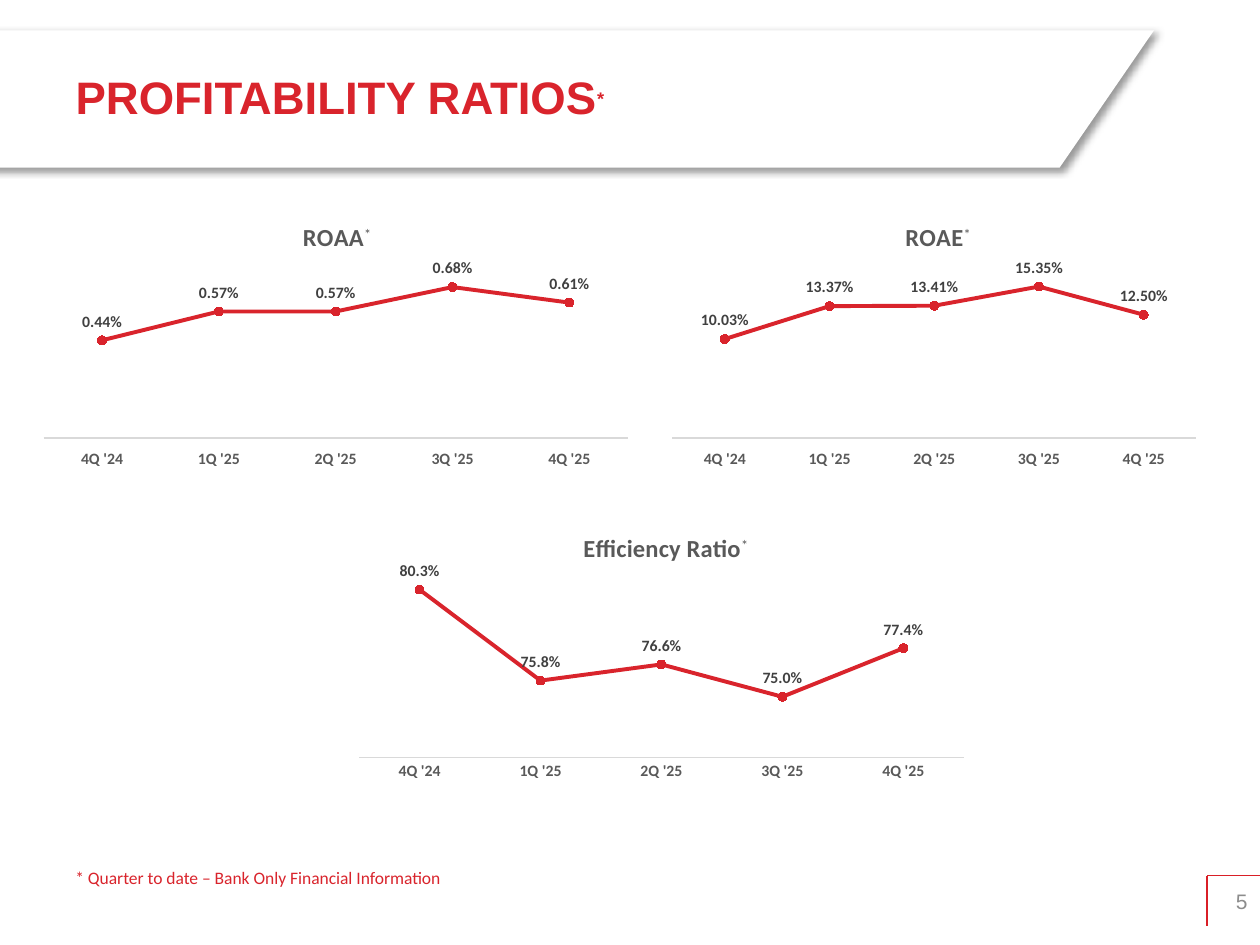
from lxml import etree
from pptx import Presentation
from pptx.chart.data import CategoryChartData
from pptx.dml.color import RGBColor
from pptx.enum.chart import (XL_CHART_TYPE, XL_LABEL_POSITION, XL_MARKER_STYLE,
                             XL_TICK_LABEL_POSITION, XL_TICK_MARK)
from pptx.enum.shapes import MSO_CONNECTOR
from pptx.enum.text import MSO_ANCHOR, MSO_AUTO_SIZE, PP_ALIGN
from pptx.oxml import parse_xml
from pptx.oxml.ns import nsdecls, qn
from pptx.util import Inches, Pt

RED = "D9242C"
GRAY = "595959"
QUARTERS = ["4Q '24", "1Q '25", "2Q '25", "3Q '25", "4Q '25"]
LABEL_FORMAT = {"size": Pt(9), "bold": True, "name": "Calibri"}
CHARTS = [
    {"box": (0.25, 1.59, 4.83, 2.17), "title": "ROAA", "title_left": 0.44,
     "values": [0.0044, 0.0057, 0.0057, 0.0068, 0.0061], "format": "0.00%",
     "scale": (0, 0.008), "plot": (0.02, 0.22, 0.96, 0.65), "marker": RED, "low": True},
    {"box": (5.25, 1.59, 4.33, 2.17), "title": "ROAE", "title_left": 0.44,
     "values": [0.1003, 0.1337, 0.1341, 0.1535, 0.125], "format": "0.00%",
     "scale": (0, 0.18), "plot": (0.02, 0.22, 0.96, 0.65), "marker": "FF0000", "low": True},
    {"box": (2.75, 4.06, 5, 2.17), "title": "Efficiency Ratio", "title_left": 0.37,
     "values": [0.803, 0.758, 0.766, 0.75, 0.774], "format": "0.0%",
     "scale": (0.72, 0.82), "plot": (0.02, 0.16, 0.96, 0.74), "marker": RED, "low": False},
]


def rgb(value):
    """Turn a hex string into a colour."""
    return RGBColor.from_string(value)


def style(font, color, **formats):
    """Set a font's colour and its other format values."""
    font.color.rgb = rgb(color)
    for name, value in formats.items():
        setattr(font, name, value)


def add_span(para, text, color, raised=False, **formats):
    """Add a formatted run, raised as a superscript if asked."""
    span = para.add_run()
    span.text = text
    style(span.font, color, **formats)
    if raised:
        span._r.get_or_add_rPr().set("baseline", "30000")


def add_banner(page, box):
    """Draw the white slanted banner with its soft shadow."""
    left, top, width, height = box
    right, bottom = left + width, top + height
    points = [(left, top), (right, top), (right - 0.75, bottom), (left, bottom)]
    corners = [(Inches(x), Inches(y)) for x, y in points]
    builder = page.shapes.build_freeform(*corners[0])
    builder.add_line_segments(corners[1:], close=True)
    banner = builder.convert_to_shape()
    banner.shadow.inherit = False
    banner.fill.solid()
    banner.fill.fore_color.rgb = rgb("FFFFFF")
    banner.line.fill.background()
    effects = banner._element.spPr.find(qn("a:effectLst"))
    effects.append(parse_xml(
        f'<a:outerShdw {nsdecls("a")} blurRad="{Pt(4)}" dist="{Pt(3)}" dir="2700000" '
        'algn="tl" rotWithShape="0"><a:srgbClr val="000000"><a:alpha val="40000"/>'
        '</a:srgbClr></a:outerShdw>'))


def add_title(page, box):
    """Place the slide title in front of the banner."""
    title = page.shapes.title
    page.shapes._spTree.append(title._element)
    title.left, title.top, title.width, title.height = map(Inches, box)
    frame = title.text_frame
    frame.auto_size = MSO_AUTO_SIZE.NONE
    frame.vertical_anchor = MSO_ANCHOR.MIDDLE
    para = frame.paragraphs[0]
    para.alignment = PP_ALIGN.LEFT
    formats = {"name": "Arial", "bold": True}
    add_span(para, "PROFITABILITY RATIOS", RED, size=Pt(26), **formats)
    add_span(para, "*", RED, raised=True, size=Pt(18), **formats)


def add_page_number(page, box):
    """Draw the page number with rules on its left and top."""
    left, top, width, height = box
    for end in [(left, top + height), (left + width, top)]:
        rule = page.shapes.add_connector(
            MSO_CONNECTOR.STRAIGHT, *map(Inches, (left, top) + end))
        rule.line.color.rgb = rgb("D91F27")
        rule.line.width = Pt(0.75)
        etree.SubElement(rule._element.spPr, qn("a:effectLst"))
    frame = page.shapes.add_textbox(*map(Inches, box)).text_frame
    frame.word_wrap = True
    frame.vertical_anchor = MSO_ANCHOR.MIDDLE
    para = frame.paragraphs[0]
    para.alignment = PP_ALIGN.RIGHT
    add_span(para, "5", "8C8C8C", size=Pt(12), name="Arial")


def add_footnote(page, box):
    """Place the footnote on one line."""
    frame = page.shapes.add_textbox(*map(Inches, box)).text_frame
    frame.word_wrap = False
    frame.auto_size = MSO_AUTO_SIZE.SHAPE_TO_FIT_TEXT
    add_span(frame.paragraphs[0], "* Quarter to date – Bank Only Financial Information",
             RED, size=Pt(10), name="Calibri")


def make_layout(**values):
    """Build a manual chart layout from fractions of the chart."""
    parts = "".join(f'<c:{name} val="{value}"/>' for name, value in values.items())
    return parse_xml(f'<c:layout {nsdecls("c")}><c:manualLayout>{parts}'
                     '</c:manualLayout></c:layout>')


def set_layout(parent, layout, after=None):
    """Replace a chart part's layout, after the given child or first."""
    for old in parent.findall(qn("c:layout")):
        parent.remove(old)
    if after is None:
        parent.insert(0, layout)
    else:
        parent.find(qn(after)).addnext(layout)


def add_chart_title(chart, text, left):
    """Write a chart title with a raised asterisk."""
    chart.has_title = True
    title = chart.chart_title
    title.include_in_layout = False
    para = title.text_frame.paragraphs[0]
    add_span(para, text, GRAY, size=Pt(14), bold=True, name="Calibri")
    add_span(para, "*", GRAY, raised=True, size=Pt(14), bold=False, name="Calibri")
    set_layout(title._element, make_layout(xMode="edge", yMode="edge", x=left, y=0.06),
               after="c:tx")


def style_axes(chart, details):
    """Show the quarter axis and hide the percentage axis."""
    quarters, percent = chart.category_axis, chart.value_axis
    quarters.has_major_gridlines = percent.has_major_gridlines = False
    quarters.major_tick_mark = quarters.minor_tick_mark = XL_TICK_MARK.NONE
    quarters.format.line.color.rgb = rgb("D9D9D9")
    quarters.format.line.width = Pt(0.75)
    style(quarters.tick_labels.font, GRAY, **LABEL_FORMAT)
    if details["low"]:
        quarters.tick_label_position = XL_TICK_LABEL_POSITION.LOW
    percent.minimum_scale, percent.maximum_scale = details["scale"]
    percent.tick_labels.number_format = details["format"]
    percent.tick_labels.number_format_is_linked = False
    percent.visible = False


def style_series(series, details):
    """Colour the line and its markers and label the points."""
    series.smooth = False
    series.format.line.color.rgb = rgb(RED)
    series.format.line.width = Pt(2.25)
    marker = series.marker
    marker.style, marker.size = XL_MARKER_STYLE.CIRCLE, 5
    marker.format.fill.solid()
    marker.format.fill.fore_color.rgb = rgb(details["marker"])
    marker.format.line.color.rgb = rgb(RED)
    labels = series.data_labels
    labels.show_value = True
    labels.position = XL_LABEL_POSITION.ABOVE
    labels.number_format = details["format"]
    labels.number_format_is_linked = False
    style(labels.font, "404040", **LABEL_FORMAT)


def add_ratio_chart(page, details):
    """Add the line chart of one ratio."""
    data = CategoryChartData(number_format=details["format"])
    data.categories = QUARTERS
    data.add_series("Series 1", details["values"])
    chart = page.shapes.add_chart(
        XL_CHART_TYPE.LINE_MARKERS, *map(Inches, details["box"]), data).chart
    chart.has_legend = False
    style(chart.font, "000000", size=Pt(10), name="Calibri")
    add_chart_title(chart, details["title"], details["title_left"])
    style_axes(chart, details)
    plot = chart.plots[0]
    plot.vary_by_categories = False
    style_series(plot.series[0], details)
    left, top, width, height = details["plot"]
    set_layout(plot._element.getparent(), make_layout(
        layoutTarget="inner", xMode="edge", yMode="edge", x=left, y=top, w=width, h=height))


def main():
    """Build the slide and save the deck."""
    deck = Presentation()
    deck.slide_width, deck.slide_height = Inches(10), Inches(7.5)
    page = deck.slides.add_slide(deck.slide_layouts[5])
    add_banner(page, (-0.17, 0.24, 9.33, 1.09))
    add_page_number(page, (9.58, 6.95, 0.42, 0.4))
    add_title(page, (0.5, 0.25, 7.92, 1.03))
    add_footnote(page, (0.5, 6.83, 3.18, 0.27))
    for details in CHARTS:
        add_ratio_chart(page, details)
    deck.save("out.pptx")


if __name__ == "__main__":
    main()
